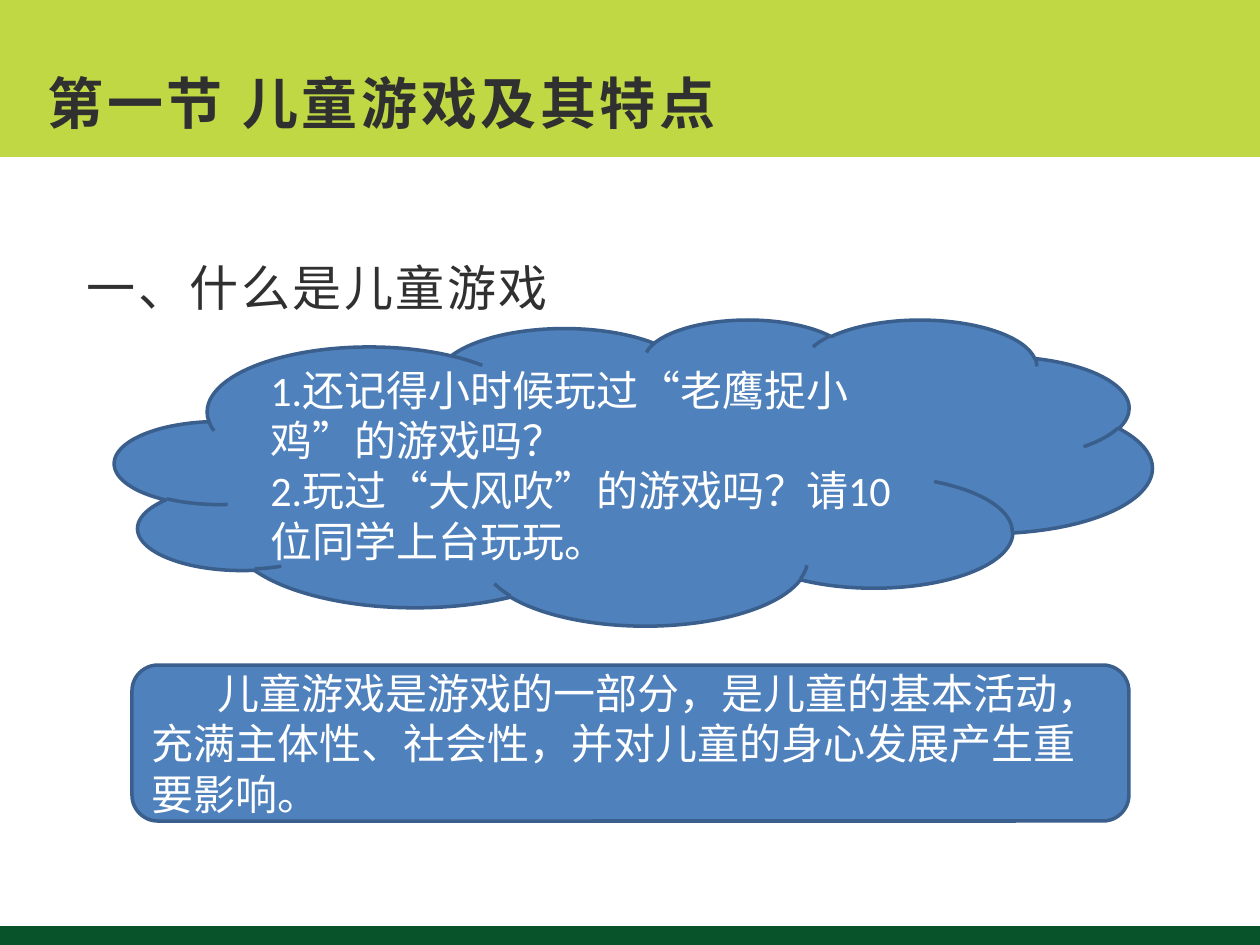
from lxml.etree import SubElement
from pptx import Presentation
from pptx.dml.color import RGBColor
from pptx.enum.shapes import MSO_SHAPE
from pptx.enum.text import MSO_ANCHOR, MSO_AUTO_SIZE, PP_ALIGN
from pptx.oxml.ns import qn
from pptx.util import Pt

WIDTH, HEIGHT = 1260, 945
EMU_PER_PX = 914400 / 126
LIME = RGBColor(0xBF, 0xD8, 0x44)
GREEN = RGBColor(0x09, 0x53, 0x2A)
BLUE = RGBColor(0x4F, 0x81, 0xBD)
OUTLINE = RGBColor(0x3A, 0x5F, 0x8C)
INK = RGBColor(0x30, 0x30, 0x30)
WHITE = RGBColor(0xFF, 0xFF, 0xFF)
EAST_ASIAN_FONT = "Noto Sans CJK SC"


def px(length):
    return round(length * EMU_PER_PX)


def write(shape, *lines, font, size, color, bold=False, spacing=0, indent=0,
          anchor=MSO_ANCHOR.MIDDLE, line_spacing=1.0, space_after=0):
    frame = shape.text_frame
    frame.word_wrap = True
    frame.auto_size = MSO_AUTO_SIZE.NONE
    frame.vertical_anchor = anchor
    for index, line in enumerate(lines):
        paragraph = frame.add_paragraph() if index else frame.paragraphs[0]
        properties = paragraph._p.get_or_add_pPr()
        properties.set("marL", "0")
        properties.set("indent", str(px(indent)))
        SubElement(properties, qn("a:buNone"))
        paragraph.alignment = PP_ALIGN.LEFT
        paragraph.line_spacing = line_spacing
        paragraph.space_before = Pt(0)
        paragraph.space_after = Pt(space_after)
        run = paragraph.add_run()
        run.text = line
        run.font.name = font
        run.font.size = Pt(size)
        run.font.bold = bold
        run.font.color.rgb = color
        run_properties = run._r.get_or_add_rPr()
        run_properties.set("spc", str(round(spacing * 100)))
        SubElement(run_properties, qn("a:ea"), typeface=EAST_ASIAN_FONT)


class SlideBuilder:
    """Holds the callout style and the slide being built."""

    def __init__(self, slide):
        self.slide = slide
        self.callout_style = {"font": "Calibri", "size": 24, "color": WHITE}

    def shape(self, kind, left, top, width, height, fill):
        shape = self.slide.shapes.add_shape(
            kind, px(left), px(top), px(width), px(height))
        shape.shadow.inherit = False
        shape.fill.solid()
        shape.fill.fore_color.rgb = fill
        return shape

    def band(self, top, height, fill):
        band = self.shape(MSO_SHAPE.RECTANGLE, 0, top, WIDTH, height, fill)
        band.line.fill.background()
        tree = self.slide.shapes._spTree
        tree.remove(band._element)
        tree.insert(2, band._element)

    def placeholder(self, index, left, top, width, height, text, **style):
        shape = self.slide.placeholders[index]
        shape.left, shape.top = px(left), px(top)
        shape.width, shape.height = px(width), px(height)
        write(shape, text, color=INK, **style)

    def callout(self, kind, left, top, width, height, *lines, indent=0):
        shape = self.shape(kind, left, top, width, height, BLUE)
        shape.line.color.rgb = OUTLINE
        shape.line.width = Pt(2)
        write(shape, *lines, indent=indent, **self.callout_style)


def main():
    presentation = Presentation()
    presentation.slide_width = px(WIDTH)
    presentation.slide_height = px(HEIGHT)
    layout = presentation.slide_layouts[1]
    builder = SlideBuilder(presentation.slides.add_slide(layout))
    builder.band(0, 157, LIME)
    builder.band(926, 19, GREEN)
    builder.placeholder(0, 35, 45, 1143, 97, "第一节 儿童游戏及其特点",
                        font="Arial", size=32, bold=True, spacing=2,
                        anchor=MSO_ANCHOR.BOTTOM)
    builder.placeholder(1, 74, 222, 1116, 653, "一、什么是儿童游戏",
                        font=EAST_ASIAN_FONT, size=28, spacing=1.5,
                        anchor=MSO_ANCHOR.TOP, line_spacing=1.5, space_after=10)
    builder.callout(MSO_SHAPE.CLOUD, 115, 319, 1037, 306,
                    "1.还记得小时候玩过“老鹰捉小鸡”的游戏吗？",
                    "2.玩过“大风吹”的游戏吗？请10位同学上台玩玩。")
    builder.callout(MSO_SHAPE.ROUNDED_RECTANGLE, 132, 665, 997, 156,
                    "儿童游戏是游戏的一部分，是儿童的基本活动，"
                    "充满主体性、社会性，并对儿童的身心发展产生重要影响。",
                    indent=66)
    presentation.save("out.pptx")


if __name__ == "__main__":
    main()
